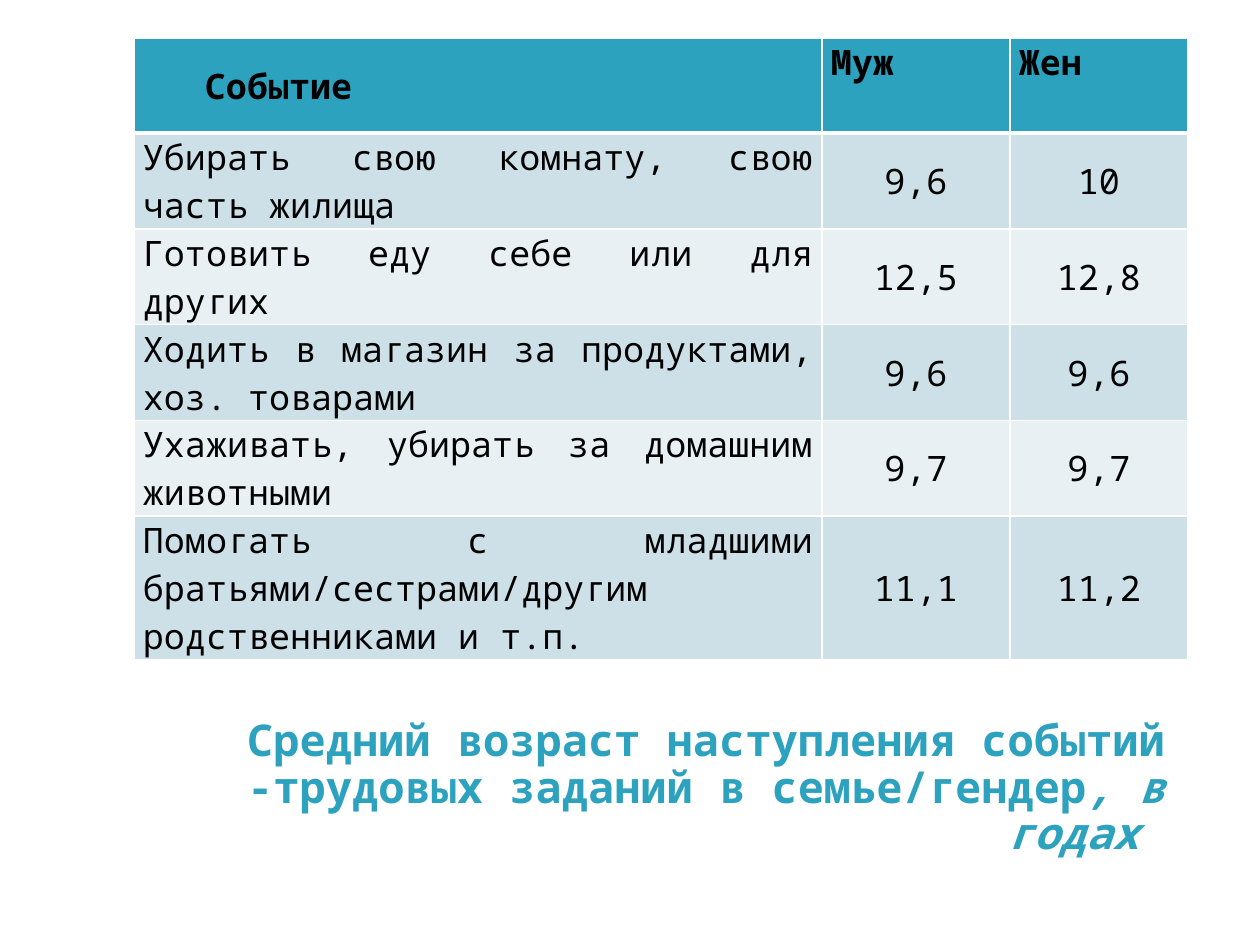
from lxml import etree
from pptx import Presentation
from pptx.dml.color import RGBColor
from pptx.enum import text
from pptx.oxml.ns import qn
from pptx.util import Pt

FONT = "Noto Sans Mono"
TEAL = RGBColor(0x2D, 0xA2, 0xBF)
BLACK = RGBColor(0, 0, 0)
BANDS = (RGBColor(0xCD, 0xE0, 0xE8), RGBColor(0xE8, 0xF0, 0xF4))
BORDER = "FFFFFF"

TITLE = ("Средний возраст наступления событий -трудовых заданий в семье/гендер",
         ", в годах \v")
ROWS = [
    ("Событие", "Муж ", "Жен"),
    ("Убирать свою комнату, свою часть жилища", "9,6", "10"),
    ("Готовить еду себе или для других", "12,5", "12,8"),
    ("Ходить в магазин за продуктами, хоз.\u00a0товарами", "9,6", "9,6"),
    ("Ухаживать, убирать за домашним животными", "9,7", "9,7"),
    ("Помогать с младшими братьями/сестрами/другим родственниками и т.п.", "11,1", "11,2"),
]
COLUMN_WIDTHS = (688, 188, 178)
ROW_HEIGHTS = (95, 95, 95, 95, 95, 126)


def px(length):
    return round(length * 914400 / 126)


def style(font, size, color, bold):
    font.name, font.size, font.bold = FONT, Pt(size), bold
    font.color.rgb = color


def set_borders(cell, bottom_width):
    properties = cell._tc.get_or_add_tcPr()
    widths = {"a:lnL": 1, "a:lnR": 1, "a:lnT": 1, "a:lnB": bottom_width}
    for index, (side, width) in enumerate(widths.items()):
        line = etree.Element(qn(side), w=str(Pt(width)))
        fill = etree.SubElement(line, qn("a:solidFill"))
        etree.SubElement(fill, qn("a:srgbClr"), val=BORDER)
        properties.insert(index, line)


deck = Presentation()
deck.slide_width, deck.slide_height = px(1260), px(945)
page = deck.slides.add_slide(deck.slide_layouts[5])

# Title below the table
title = page.shapes.title
title.left, title.top, title.width, title.height = px(115), px(711), px(1062), px(158)
frame = title.text_frame
frame.word_wrap = True
frame.auto_size = text.MSO_AUTO_SIZE.NONE
frame.vertical_anchor = text.MSO_ANCHOR.TOP
frame.margin_top = px(9)
frame.text = TITLE[0]
para = frame.paragraphs[0]
para.alignment = text.PP_ALIGN.RIGHT
para.line_spacing = 0.88
ending, _, _ = TITLE[1].partition("\v")
para.add_run().text = ending
para.add_line_break()
for span in para.runs:
    style(span.font, 25, TEAL, True)
para.runs[1].font.italic = True

# Table of average ages
table = page.shapes.add_table(len(ROWS), len(COLUMN_WIDTHS), px(134), px(38),
                              px(sum(COLUMN_WIDTHS)), px(sum(ROW_HEIGHTS))).table
for column, width in zip(table.columns, COLUMN_WIDTHS):
    column.width = px(width)
for row, height in zip(table.rows, ROW_HEIGHTS):
    row.height = px(height)

for r, values in enumerate(ROWS):
    header = r == 0
    for c, value in enumerate(values):
        cell = table.cell(r, c)
        cell.text = value
        cell.margin_left = cell.margin_right = px(9)
        cell.margin_top = cell.margin_bottom = 0
        cell.fill.solid()
        cell.fill.fore_color.rgb = TEAL if header else BANDS[(r - 1) % 2]
        set_borders(cell, 3 if header else 1)
        # The event heading and all the ages are centred vertically
        centred = header == (c == 0)
        cell.vertical_anchor = text.MSO_ANCHOR.MIDDLE if centred else text.MSO_ANCHOR.TOP
        para = cell.text_frame.paragraphs[0]
        if header and c == 0:
            para._p.get_or_add_pPr().set("indent", str(px(62)))
        elif centred:
            para.alignment = text.PP_ALIGN.CENTER
        else:
            para.alignment = text.PP_ALIGN.JUSTIFY
        style(para.runs[0].font, 20, BLACK, header)

deck.save("out.pptx")
